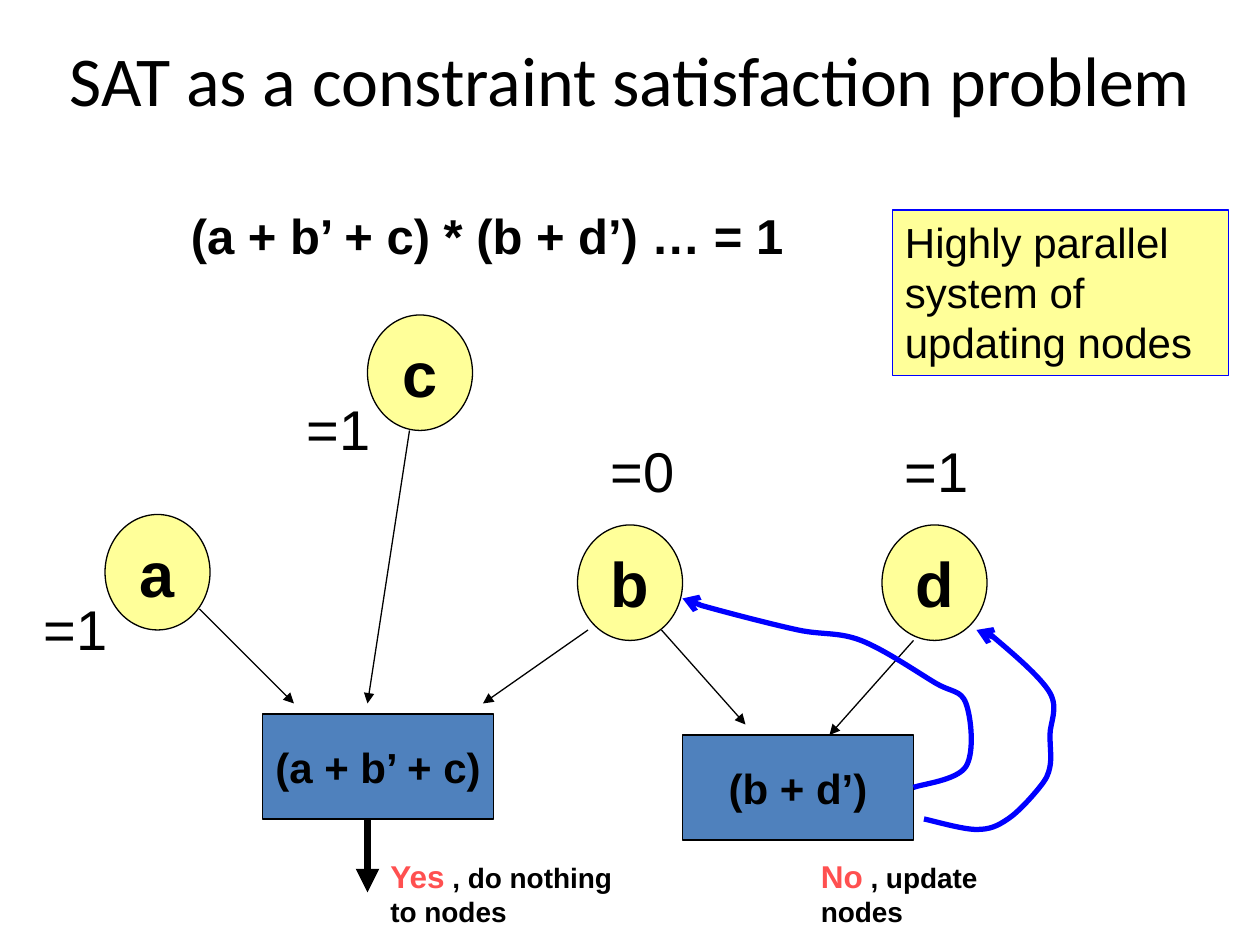
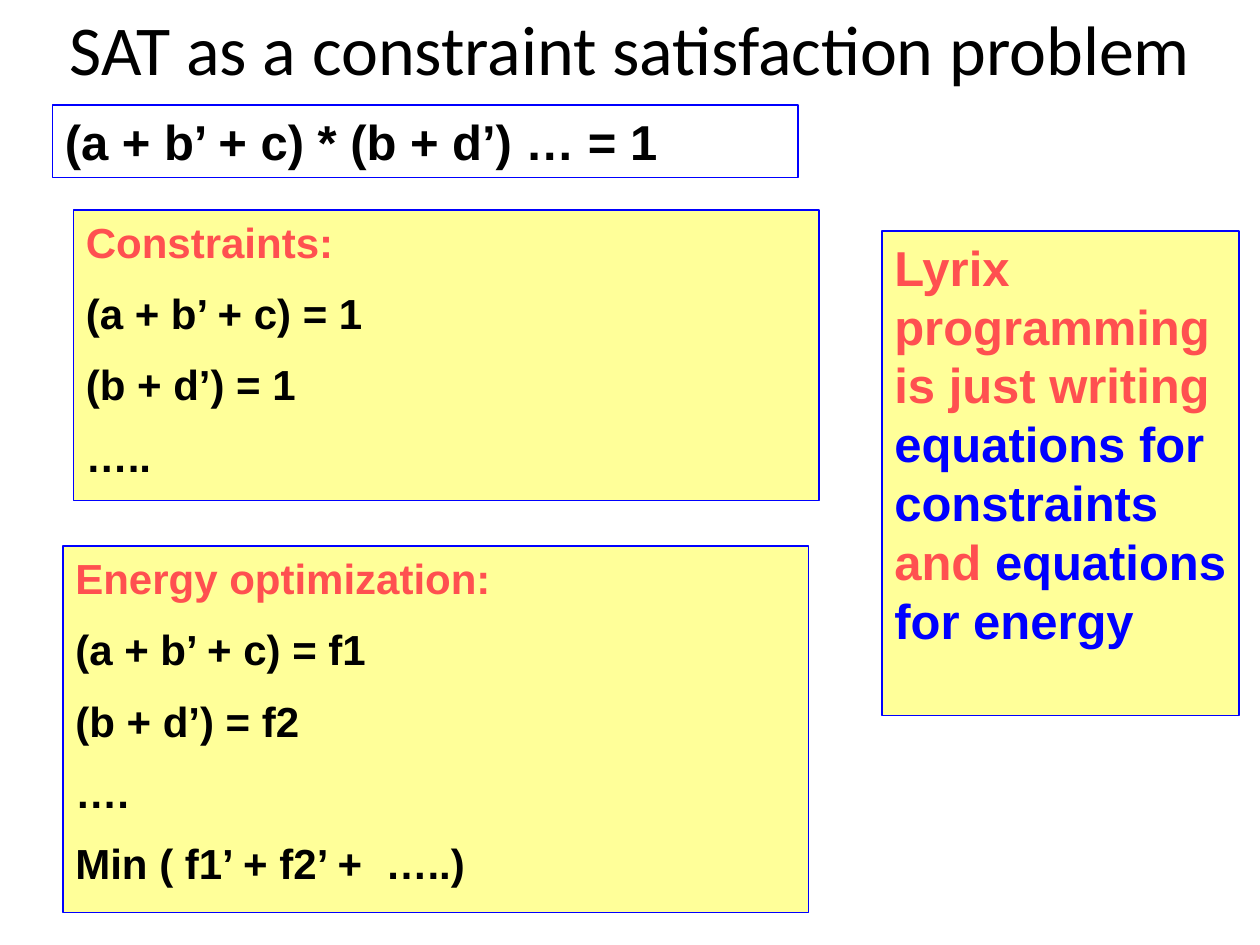
from dataclasses import dataclass
from itertools import pairwise

from pptx import Presentation
from pptx.dml.color import RGBColor
from pptx.enum.shapes import MSO_CONNECTOR as Connector, MSO_SHAPE as Shape
from pptx.enum.text import MSO_ANCHOR as Anchor, PP_ALIGN as Align
from pptx.oxml.ns import qn
from pptx.util import Pt
from lxml.etree import SubElement


@dataclass(frozen=True)
class Theme:
    ink: RGBColor = RGBColor(0x00, 0x00, 0x00)
    yellow: RGBColor = RGBColor(0xFF, 0xFF, 0x99)
    steel: RGBColor = RGBColor(0x4F, 0x81, 0xBD)
    blue: RGBColor = RGBColor(0x00, 0x00, 0xFF)
    red: RGBColor = RGBColor(0xFF, 0x50, 0x50)
    title_font: str = "Calibri"
    body_font: str = "Arial"
    title: int = 40
    variable: int = 36
    value: int = 32
    formula: int = 28
    body: int = 24
    verdict: int = 18
    action: int = 16
    hairline: float = 0.75
    feedback: float = 3
    outcome: float = 4.5


THEME = Theme()
TITLE = "SAT as a constraint satisfaction problem"
FORMULA = "(a + b’ + c) * (b + d’) … = 1"
VARIABLE_SIZE = (60, 66)
CLAUSE_SIZE = (132, 60)
PANEL_WIDTH = 426


def box(left, top, width, height):
    return Pt(left), Pt(top), Pt(width), Pt(height)


def add_titled_slide(deck, title_height):
    slide = deck.slides.add_slide(deck.slide_layouts[5])
    title = slide.shapes.title
    title.left, title.top, title.width, title.height = box(0, 0, 720, title_height)
    title.text_frame.text = TITLE
    title.text_frame.vertical_anchor = Anchor.MIDDLE
    heading = title.text_frame.paragraphs[0]
    heading.alignment = Align.CENTER
    heading.font.name = THEME.title_font
    heading.font.size = Pt(THEME.title)
    heading.font.color.rgb = THEME.ink
    return slide


def write(frame, paragraphs, size, bold=False, align=Align.LEFT):
    for index, runs in enumerate(paragraphs):
        paragraph = frame.paragraphs[0] if index == 0 else frame.add_paragraph()
        paragraph.alignment = align
        paragraph.font.name = THEME.body_font
        paragraph.font.size = Pt(size)
        paragraph.font.bold = bold
        if index:
            paragraph.space_before = Pt(size / 2)
        for text, color, *run_size in runs:
            run = paragraph.add_run()
            run.text = text
            run.font.color.rgb = color
            if run_size:
                run.font.size = Pt(run_size[0])


def add_label(slide, place, runs, size, bold=False):
    frame = slide.shapes.add_textbox(*box(*place)).text_frame
    frame.word_wrap = True
    write(frame, [runs], size, bold)


def add_outlined(slide, kind, place, fill, line):
    outlined = slide.shapes.add_shape(kind, *box(*place))
    outlined.shadow.inherit = False
    if fill is None:
        outlined.fill.background()
    else:
        outlined.fill.solid()
        outlined.fill.fore_color.rgb = fill
    outlined.line.color.rgb = line
    outlined.line.width = Pt(THEME.hairline)
    return outlined


def add_panel(slide, place, paragraphs, size, bold=True, fill=THEME.yellow):
    frame = add_outlined(slide, Shape.RECTANGLE, place, fill, THEME.blue).text_frame
    frame.word_wrap = True
    frame.vertical_anchor = Anchor.TOP
    write(frame, paragraphs, size, bold)


def add_node(slide, kind, place, text, fill, size):
    frame = add_outlined(slide, kind, place, fill, THEME.ink).text_frame
    frame.word_wrap = False
    frame.vertical_anchor = Anchor.MIDDLE
    write(frame, [[(text, THEME.ink)]], size, True, Align.CENTER)


def style_arrow(arrow, color, width, head):
    arrow.line.color.rgb = color
    arrow.line.width = Pt(width)
    SubElement(arrow.line._get_or_add_ln(), qn("a:tailEnd"), type=head)


def add_arrow(slide, start, end, width=THEME.hairline):
    arrow = slide.shapes.add_connector(
        Connector.STRAIGHT, *(Pt(value) for value in (*start, *end)))
    style_arrow(arrow, THEME.ink, width, "triangle")
    SubElement(arrow._element.spPr, qn("a:effectLst"))


def add_feedback(slide, stops):
    points = [(Pt(x), Pt(y)) for x, y in stops]
    builder = slide.shapes.build_freeform(*points[0])
    builder.add_line_segments(points[1:], close=False)
    curve = builder.convert_to_shape()
    curve.shadow.inherit = False
    curve.fill.background()
    style_arrow(curve, THEME.blue, THEME.feedback, "arrow")
    smooth(curve, points)


def smooth(curve, points):
    padded = [points[0], *points, points[-1]]
    tangents = [((after[0] - before[0]) / 6, (after[1] - before[1]) / 6)
                for before, after in zip(padded, padded[2:])]
    segments = list(curve._element.iter(qn("a:lnTo")))
    legs = pairwise(zip(points, tangents))
    for segment, ((start, leaving), (end, arriving)) in zip(segments, legs):
        segment.tag = qn("a:cubicBezTo")
        controls = ((start[0] + leaving[0], start[1] + leaving[1]),
                    (end[0] - arriving[0], end[1] - arriving[1]))
        for index, (x, y) in enumerate(controls):
            control = SubElement(segment, qn("a:pt"), x=str(round(x - curve.left)),
                                 y=str(round(y - curve.top)))
            segment.insert(index, control)


def build_network(deck):
    slide = add_titled_slide(deck, 90)
    add_label(slide, (102, 114, PANEL_WIDTH, 41), [(FORMULA, THEME.ink)],
              THEME.formula, True)

    variables = [
        ("a", (60, 294), "=1", (18, 336)),
        ("b", (330, 300), "=0", (342, 246)),
        ("c", (210, 180), "=1", (168, 222)),
        ("d", (504, 300), "=1", (510, 246)),
    ]
    for name, place, value, value_place in variables:
        add_node(slide, Shape.OVAL, (*place, *VARIABLE_SIZE), name,
                 THEME.yellow, THEME.variable)
        add_label(slide, (*value_place, 66, 45), [(value, THEME.ink)], THEME.value)

    for clause, place in (("(a + b’ + c)", (150, 408)), ("(b + d’)", (390, 420))):
        add_node(slide, Shape.RECTANGLE, (*place, *CLAUSE_SIZE), clause,
                 THEME.steel, THEME.body)

    memberships = [
        ((114, 348), (168, 402)),
        ((234, 246), (210, 402)),
        ((336, 360), (276, 402)),
        ((378, 360), (426, 414)),
        ((522, 366), (474, 420)),
    ]
    for start, end in memberships:
        add_arrow(slide, start, end)
    add_arrow(slide, (210, 468), (210, 510), THEME.outcome)

    verdicts = [
        ("Yes", " , do nothing to nodes", 216, 156),
        ("No", " , update nodes", 462, 114),
    ]
    for verdict, action, left, width in verdicts:
        add_label(slide, (left, 486, width, 48),
                  [(verdict, THEME.red), (action, THEME.ink, THEME.action)],
                  THEME.verdict, True)

    add_feedback(slide, [(528, 468), (558, 474), (576, 468), (594, 450), (600, 438),
                         (600, 420), (600, 396), (570, 366), (558, 360)])
    add_feedback(slide, [(522, 450), (552, 438), (552, 402), (534, 390), (492, 366),
                         (456, 360), (408, 348), (390, 342)])
    add_panel(slide, (510, 120, 192, 94.5),
              [[("Highly parallel system of updating nodes", THEME.ink)]],
              THEME.body, bold=False)


def add_equations(slide, place, heading, equations):
    lines = [[(heading, THEME.red)], *([(line, THEME.ink)] for line in equations)]
    add_panel(slide, place, lines, THEME.body)


def build_equations(deck):
    slide = add_titled_slide(deck, 54)
    add_panel(slide, (30, 60, PANEL_WIDTH, 41.5), [[(FORMULA, THEME.ink)]],
              THEME.formula, fill=None)
    add_equations(slide, (42, 120, PANEL_WIDTH, 166), "Constraints:",
                  ["(a + b’ + c) = 1", "(b + d’) = 1", "….."])
    add_equations(slide, (36, 312, PANEL_WIDTH, 209.5), "Energy optimization:",
                  ["(a + b’ + c) = f1", "(b + d’) = f2", "….",
                   "Min ( f1’ + f2’ +  …..)"])
    add_panel(slide, (504, 132, 204, 277),
              [[("Lyrix programming is just writing ", THEME.red),
                ("equations for constraints", THEME.blue),
                (" and ", THEME.red),
                ("equations for energy", THEME.blue)]],
              THEME.formula)


def main():
    deck = Presentation()
    deck.slide_width, deck.slide_height = Pt(720), Pt(540)
    build_network(deck)
    build_equations(deck)
    deck.save("out.pptx")


if __name__ == "__main__":
    main()
